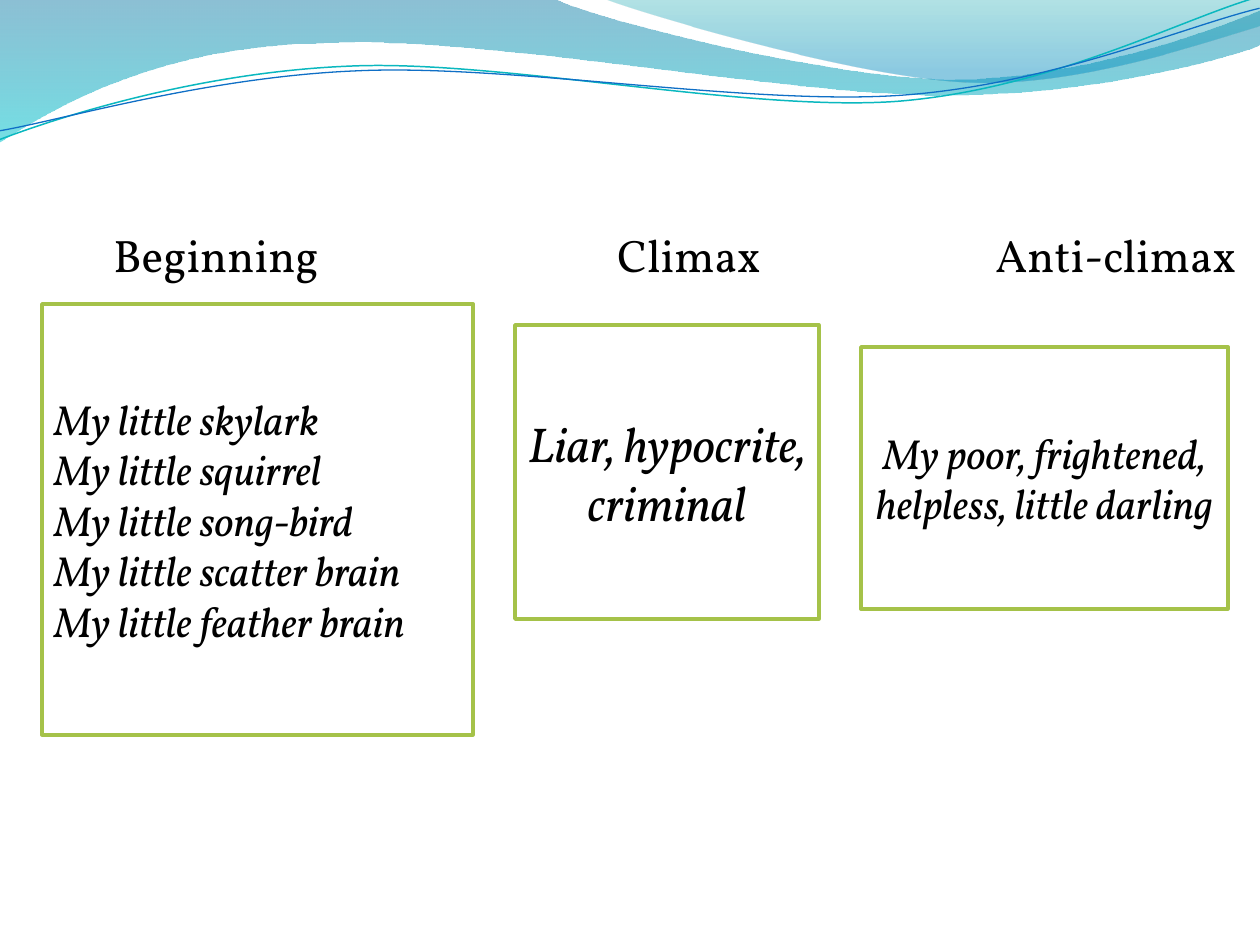
from pptx import Presentation
from pptx.dml.color import RGBColor
from pptx.enum.shapes import MSO_SHAPE
from pptx.enum.text import MSO_ANCHOR, PP_ALIGN
from pptx.oxml.ns import qn
from pptx.util import Pt
from lxml import etree

RECTANGLE = MSO_SHAPE.RECTANGLE
TOP, MIDDLE = MSO_ANCHOR.TOP, MSO_ANCHOR.MIDDLE
LEFT, CENTER = PP_ALIGN.LEFT, PP_ALIGN.CENTER

PX_PER_INCH = 126
EMU_PER_PX = 914400 / PX_PER_INCH
SLIDE_SIZE = (1260, 945)
FONT = "Vollkorn"

COLORS = {
    "text": "000000",
    "box": "FFFFFF",
    "border": "A5C249",
    "deep_blue": "0074A1",
    "aqua": "00C6CF",
    "teal": "00A1A9",
    "sky": "008BBF",
    "teal_line": "0AB8BF",
    "blue_line": "0F6FC6",
}

# Each wave is a start point followed by corners (2 numbers) and Bézier curves (6 numbers).
# Gradient stops are (position, colour, opacity in percent).
FILLED_WAVES = [
    ([(0, 0), (554, -1), (600, 21, 837, 79, 955, 79),
      (1074, 79, 1207, 33, 1260, 11), (1261, 45),
      (1239, 55, 1096, 96, 940, 95), (784, 95, 481, 35, 324, 43),
      (163, 45, 58, 105, -1, 142)],
     [(0, "deep_blue", 45), (1, "aqua", 55)]),
    ([(604, -1), (641, 14, 859, 78, 969, 82),
      (1079, 87, 1211, 40, 1260, 26), (1260, 0)],
     [(0, "teal", 30), (0.8, "sky", 45)]),
]
LINE_WAVES = [
    ([(-3, 110), (58, 90, 199, 52, 350, 53), (499, 53, 745, 118, 896, 114),
      (1049, 109, 1184, 45, 1260, 27)], "teal_line", 0.85),
    ([(-2, 101), (57, 94, 207, 57, 357, 58), (509, 58, 750, 112, 902, 108),
      (1052, 104, 1188, 52, 1262, 38)], "blue_line", 0.75),
]
LINE_WAVE_ROTATION = 357.3

HEADINGS = "\tBeginning \t\t\tClimax\t\tAnti-climax"
HEADINGS_BOX = (63, 221, 1785, 624)
HEADINGS_INDENT = 38

# box, lines, size, alignment
QUOTES = [
    ((515, 325, 304, 294), ["Liar, hypocrite, criminal"], 28, CENTER),
    ((861, 347, 367, 262), ["My poor, frightened, helpless, little darling"], 24, CENTER),
    ((42, 304, 431, 431),
     ["My little skylark", "My little squirrel", "My little song-bird",
      "My little scatter brain", "My little feather brain"], 24, LEFT),
]


def px(value):
    return int(round(value * EMU_PER_PX))


def rgb(name):
    return RGBColor.from_string(COLORS[name])


def write_text(frame, lines, size, italic=False, align=LEFT, anchor=TOP):
    frame.word_wrap = True
    frame.vertical_anchor = anchor
    for index, line in enumerate(lines):
        paragraph = frame.paragraphs[0] if index == 0 else frame.add_paragraph()
        paragraph.alignment = align
        run = paragraph.add_run()
        run.text = line
        run.font.name = FONT
        run.font.size = Pt(size)
        run.font.italic = italic
        run.font.color.rgb = rgb("text")


def add_wave(slide, segments, close):
    """Draw every point as a vertex, then merge each curve's three vertices into a Bézier."""
    points = [(px(segment[i]), px(segment[i + 1]))
              for segment in segments for i in range(0, len(segment), 2)]
    builder = slide.shapes.build_freeform(*points[0])
    builder.add_line_segments(points[1:], close=close)
    wave = builder.convert_to_shape()
    wave.shadow.inherit = False
    vertices = iter(list(wave.element.spPr.iter(qn("a:lnTo"))))
    for segment in segments[1:]:
        vertex = next(vertices)
        if len(segment) == 6:
            curve = etree.Element(qn("a:cubicBezTo"))
            vertex.addprevious(curve)
            for control in (vertex, next(vertices), next(vertices)):
                curve.append(control[0])
                control.getparent().remove(control)
    return wave


def fill_gradient(shape, stops):
    shape.fill.gradient()
    shape.fill.gradient_angle = 270
    for stop, (position, color, _) in zip(shape.fill.gradient_stops, stops):
        stop.position = position
        stop.color.rgb = rgb(color)
    colors = shape.element.spPr.iter(qn("a:srgbClr"))
    for color, (_, _, opacity) in zip(colors, stops):
        etree.SubElement(color, qn("a:alpha"), val=str(opacity * 1000))


def add_wave_banner(slide):
    for segments, stops in FILLED_WAVES:
        wave = add_wave(slide, segments, close=True)
        fill_gradient(wave, stops)
        wave.line.fill.background()
    for segments, color, width in LINE_WAVES:
        wave = add_wave(slide, segments, close=False)
        wave.rotation = LINE_WAVE_ROTATION
        wave.fill.background()
        wave.line.color.rgb = rgb(color)
        wave.line.width = Pt(width)


def add_headings(slide, box):
    """Place the three headings on one line at one-inch tab stops."""
    headings = slide.shapes.add_textbox(*map(px, box))
    write_text(headings.text_frame, [HEADINGS], size=26)
    properties = headings.text_frame.paragraphs[0]._p.get_or_add_pPr()
    properties.set("marL", str(px(HEADINGS_INDENT)))
    properties.set("indent", str(px(-HEADINGS_INDENT)))
    properties.set("defTabSz", str(px(PX_PER_INCH)))


def add_quote(slide, box, lines, size, align):
    quote = slide.shapes.add_shape(RECTANGLE, *map(px, box))
    quote.shadow.inherit = False
    quote.fill.solid()
    quote.fill.fore_color.rgb = rgb("box")
    quote.line.color.rgb = rgb("border")
    quote.line.width = Pt(2)
    write_text(quote.text_frame, lines, size, italic=True, align=align, anchor=MIDDLE)


def main():
    presentation = Presentation()
    presentation.slide_width, presentation.slide_height = map(px, SLIDE_SIZE)
    slide = presentation.slides.add_slide(presentation.slide_layouts[6])
    add_wave_banner(slide)
    add_headings(slide, HEADINGS_BOX)
    for box, lines, size, align in QUOTES:
        add_quote(slide, box, lines, size, align)
    presentation.save("out.pptx")


if __name__ == "__main__":
    main()
